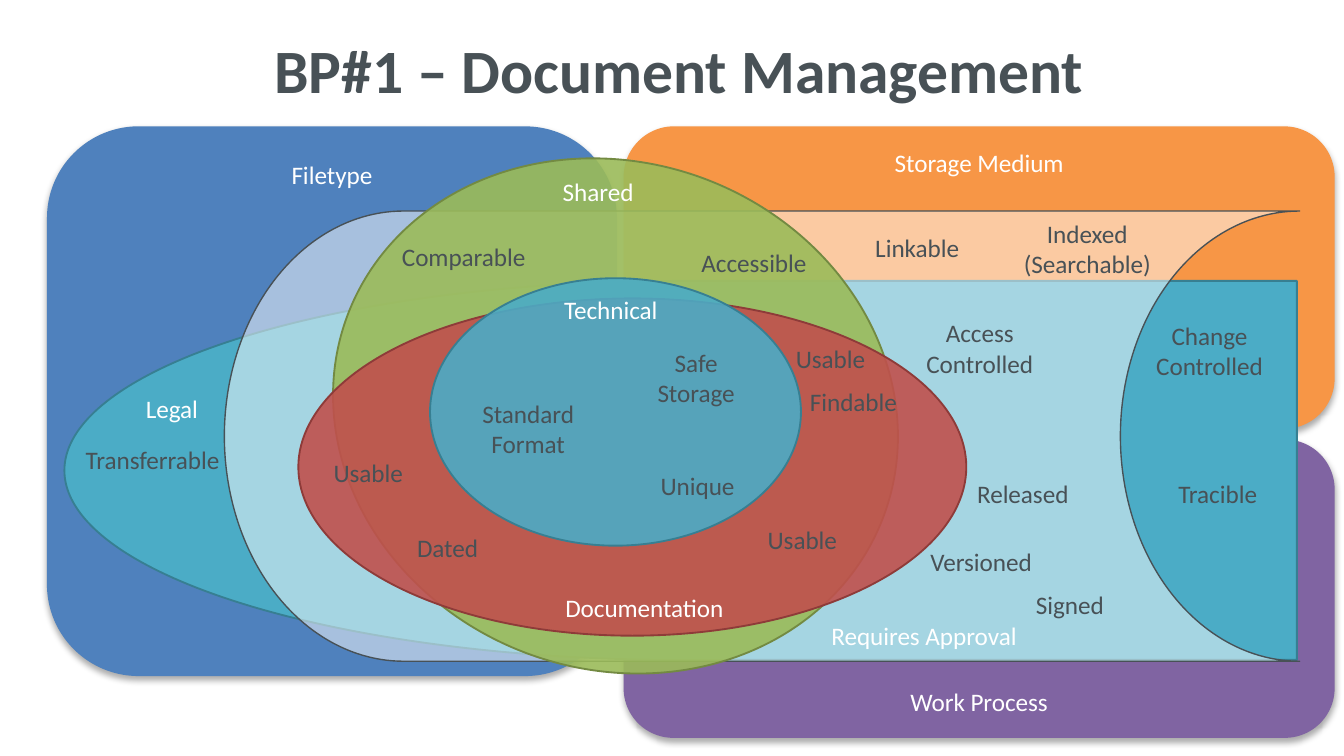
from dataclasses import dataclass
from typing import Optional

from lxml.etree import SubElement
from pptx import Presentation
from pptx.dml.color import RGBColor
from pptx.enum.shapes import MSO_SHAPE
from pptx.enum.text import MSO_ANCHOR, MSO_AUTO_SIZE, PP_ALIGN
from pptx.oxml.ns import qn
from pptx.util import Inches, Pt

SLIDE_WIDTH = 10
COLORS = {
    "white": "FFFFFF",
    "slate": "485156",
    "orange": "F79646",
    "purple": "8064A2",
    "blue": "4F81BD",
    "teal": "4BACC6",
    "dark teal": "377F92",
    "green": "9BBB59",
    "dark green": "738A42",
    "red": "C0504D",
    "dark red": "8E3B39",
    "black": "000000",
}
FONT = "Calibri"
LABEL_SIZE = 13.5


@dataclass
class Region:
    left: float
    top: float
    width: float
    height: float
    kind: MSO_SHAPE
    fill: str
    line: Optional[str] = None
    line_width: float = 1
    opacity: int = 100
    rotation: float = 0
    flipped: bool = False
    text: str = ""
    anchor: MSO_ANCHOR = MSO_ANCHOR.TOP


@dataclass
class Label:
    text: str
    left: float
    top: float
    width: float = 1.04
    height: float = 0.33
    color: str = "slate"
    anchor: MSO_ANCHOR = MSO_ANCHOR.MIDDLE


@dataclass
class Heading(Label):
    color: str = "white"
    anchor: MSO_ANCHOR = MSO_ANCHOR.TOP


CARD = MSO_SHAPE.ROUNDED_RECTANGLE
OVAL = MSO_SHAPE.OVAL

REGIONS = [
    Region(4.64, 0.94, 5.29, 2.25, CARD, "orange", text="Storage Medium"),
    Region(4.64, 3.27, 5.29, 2.22, CARD, "purple", text="Work Process",
           anchor=MSO_ANCHOR.BOTTOM),
    Region(0.35, 0.94, 4.24, 4.09, CARD, "blue", text="Filetype"),
    Region(0.48, 2.09, 9.17, 2.82, MSO_SHAPE.FLOWCHART_DELAY, "teal", "dark teal",
           flipped=True),
    Region(1.67, 1.57, 8, 3.35, MSO_SHAPE.FLOWCHART_STORED_DATA, "white", "slate",
           line_width=0.75, opacity=50),
    Region(2.45, 1.21, 4.26, 3.77, OVAL, "green", "dark green", opacity=90,
           rotation=20.5),
    Region(2.22, 2.22, 4.97, 2.51, OVAL, "red", "dark red", opacity=90),
    Region(3.2, 2.07, 2.76, 1.99, OVAL, "teal", "dark teal", opacity=90),
]

LABELS = [
    Label("Safe Storage", 4.66, 2.53, height=0.56),
    Label("Unique", 4.67, 3.45),
    Label("Findable", 5.83, 2.82),
    Label("Dated", 2.81, 3.91),
    Label("Standard Format", 3.41, 2.91, height=0.56),
    Label("Versioned", 6.78, 4.01),
    Label("Accessible", 5.09, 1.79),
    Label("Tracible", 8.54, 3.51),
    Label("Access Controlled", 6.77, 2.31, height=0.56),
    Label("Change Controlled", 8.48, 2.33, height=0.56),
    Label("Signed", 7.44, 4.33),
    Label("Released", 7.09, 3.51),
    Label("Indexed (Searchable)", 7.51, 1.57, 1.16, 0.56),
    Label("Comparable", 2.86, 1.74, 1.18),
    Label("Usable", 2.22, 3.35),
    Label("Transferrable", 0.52, 3.25, 1.23),
    Heading("Shared", 3.88, 1.26, 1.14),
    Heading("Documentation", 3.86, 4.36, 1.87),
    Heading("Technical", 3.94, 2.14, 1.21),
    Heading("Requires Approval", 5.9, 4.57, 1.95),
    Heading("Legal", 0.83, 2.88, 0.9),
    Label("Linkable", 6.16, 1.68, 1.33),
    Label("Usable", 5.45, 3.85),
    Label("Usable", 5.66, 2.5),
]


def rgb(name: str) -> RGBColor:
    return RGBColor.from_string(COLORS[name])


def write_text(shape, text: str, color: str, anchor: MSO_ANCHOR,
               size: float = LABEL_SIZE, bold: bool = False,
               alignment: PP_ALIGN = PP_ALIGN.CENTER):
    frame = shape.text_frame
    frame.word_wrap = True
    frame.vertical_anchor = anchor
    paragraph = frame.paragraphs[0]
    paragraph.alignment = alignment
    run = paragraph.add_run()
    run.text = text
    run.font.name = FONT
    run.font.size = Pt(size)
    run.font.bold = bold
    run.font.color.rgb = rgb(color)
    return paragraph


def set_opacity(color_element, percent: int) -> None:
    SubElement(color_element, qn("a:alpha"), val=str(percent * 1000))


def add_soft_shadow(shape) -> None:
    effects = shape._element.spPr.find(qn("a:effectLst"))
    shadow = SubElement(effects, qn("a:outerShdw"), blurRad=str(Pt(3.5)),
                        dist=str(Pt(2.2)), dir="5400000", rotWithShape="0")
    color = SubElement(shadow, qn("a:srgbClr"), val=COLORS["black"])
    set_opacity(color, 32)


def add_region(slide, region: Region) -> None:
    shape = slide.shapes.add_shape(
        region.kind, Inches(region.left), Inches(region.top),
        Inches(region.width), Inches(region.height))
    shape.rotation = region.rotation
    shape.fill.solid()
    shape.fill.fore_color.rgb = rgb(region.fill)
    if region.opacity < 100:
        set_opacity(shape._element.spPr.find(".//" + qn("a:srgbClr")), region.opacity)
    if region.line:
        shape.line.color.rgb = rgb(region.line)
        shape.line.width = Pt(region.line_width)
    else:
        shape.line.fill.background()
    shape.shadow.inherit = False
    if region.kind == CARD:
        add_soft_shadow(shape)
    if region.flipped:
        shape._element.spPr.xfrm.set("flipH", "1")
    if region.text:
        write_text(shape, region.text, "white", region.anchor)


def add_label(slide, label: Label) -> None:
    shape = slide.shapes.add_textbox(Inches(label.left), Inches(label.top),
                                     Inches(label.width), Inches(label.height))
    write_text(shape, label.text, label.color, label.anchor)
    shape.text_frame.auto_size = MSO_AUTO_SIZE.SHAPE_TO_FIT_TEXT


def add_title(slide, text: str) -> None:
    title = slide.shapes.title
    title.left, title.top = Inches(1.94), Inches(0.08)
    title.width, title.height = Inches(7.62), Inches(0.94)
    paragraph = write_text(title, text, "slate", MSO_ANCHOR.MIDDLE, size=33,
                           bold=True, alignment=PP_ALIGN.LEFT)
    paragraph.line_spacing = 0.9
    title.text_frame.auto_size = MSO_AUTO_SIZE.NONE


def main() -> None:
    presentation = Presentation()
    presentation.slide_width = Inches(SLIDE_WIDTH)
    presentation.slide_height = Inches(SLIDE_WIDTH * 9 / 16)
    slide = presentation.slides.add_slide(presentation.slide_layouts[5])
    add_title(slide, "BP#1 – Document Management")
    for region in REGIONS:
        add_region(slide, region)
    for label in LABELS:
        add_label(slide, label)
    presentation.save("out.pptx")


if __name__ == "__main__":
    main()
